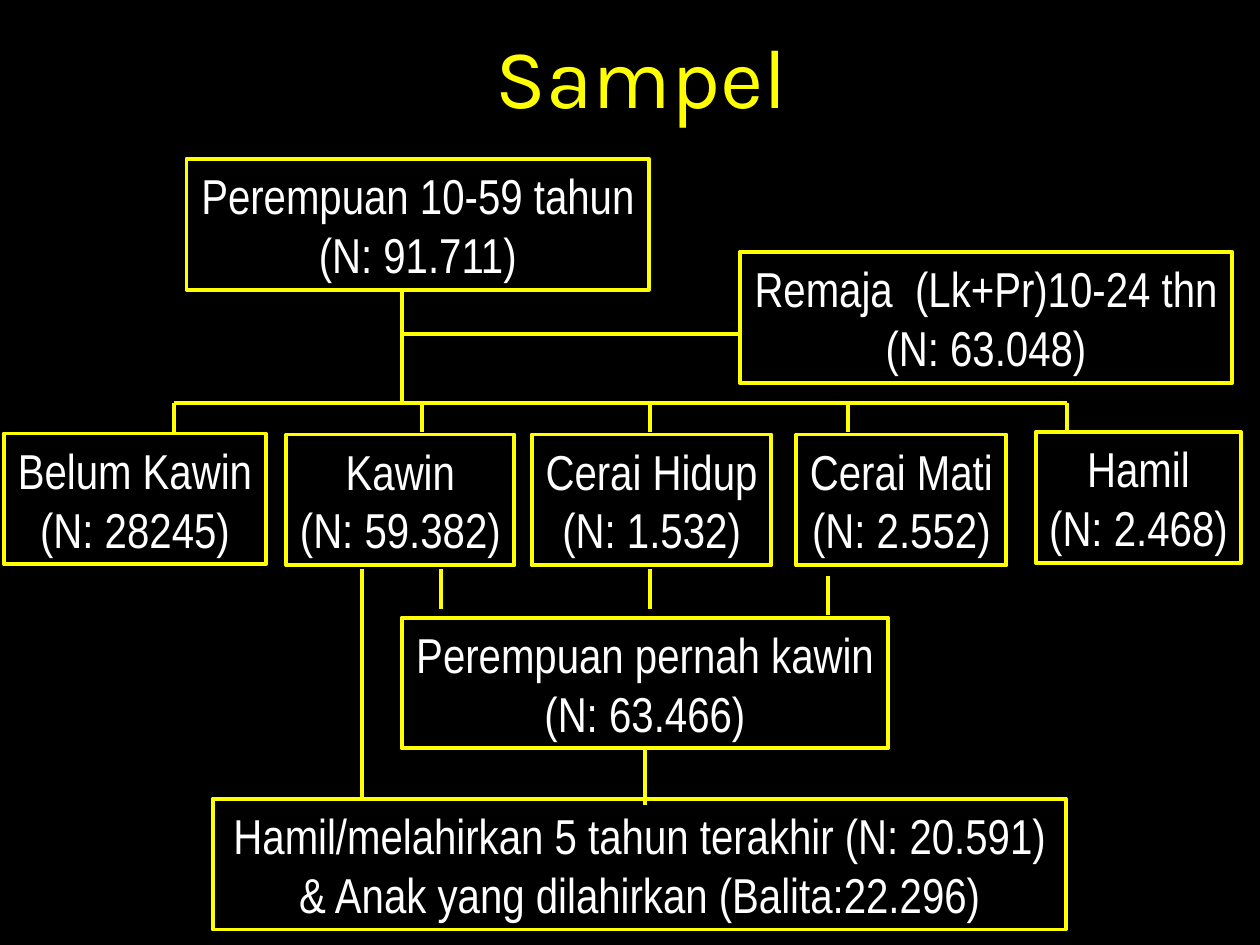
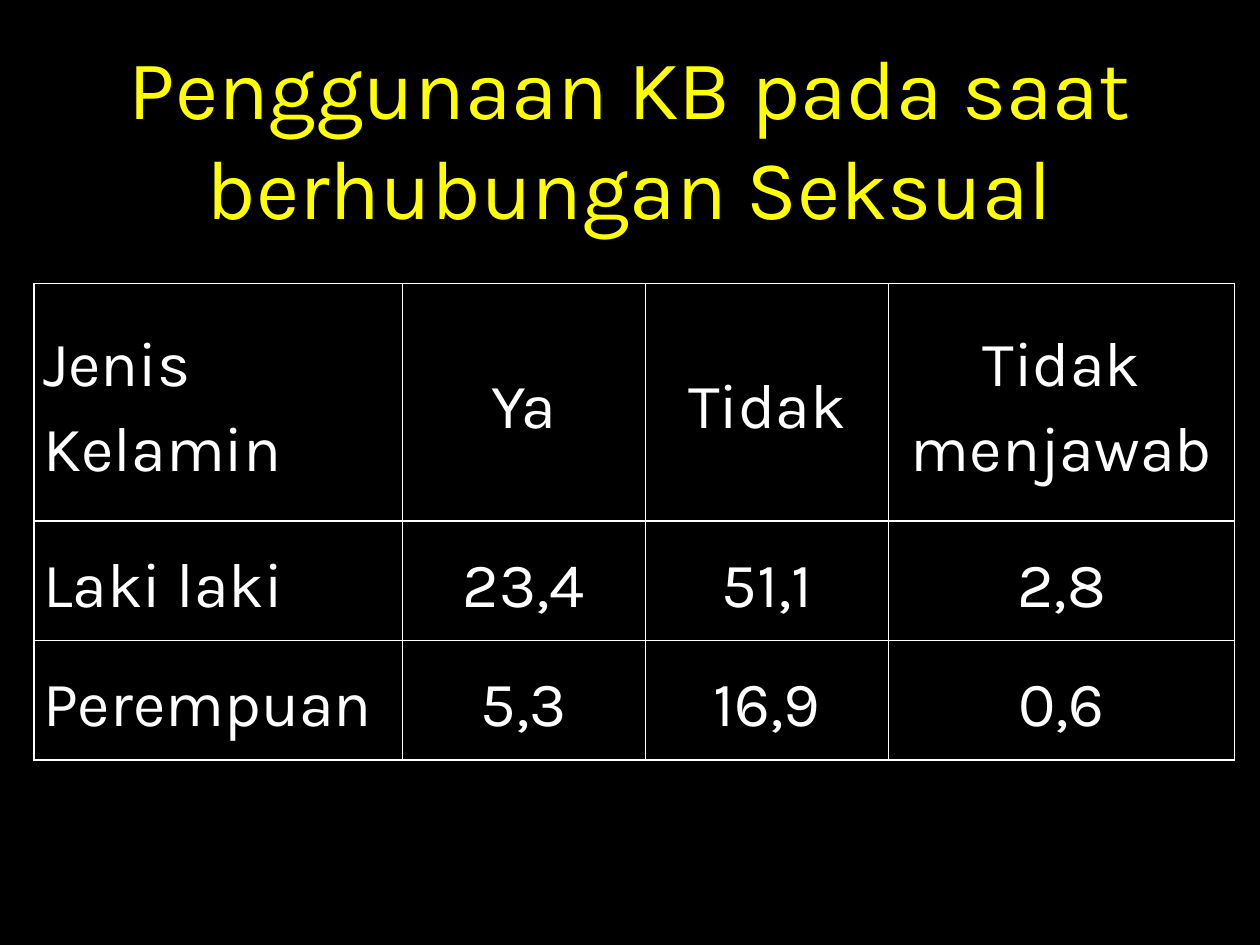
"""Build two slides: the sample tree and the table of KB use."""
from lxml import etree
from pptx import Presentation, util as u
from pptx.dml.color import RGBColor
from pptx.enum import shapes, text as t
from pptx.oxml import ns

BLACK, GOLD, WHITE = "000000", "FFFF00", "FFFFFF"
MID = t.PP_ALIGN.CENTER


def paint(fill, tone):
    fill.solid()
    fill.fore_color.rgb = RGBColor.from_string(tone)


def write(frame, words, font="Karla", size=48, tone=WHITE, align=MID, space=None, wrap=True):
    frame.word_wrap = wrap
    frame.vertical_anchor = t.MSO_ANCHOR.MIDDLE
    frame.text = words
    for para in frame.paragraphs:
        para.alignment = align
        para.line_spacing = space
        for run in para.runs:
            run.font.name = font
            run.font.size = u.Pt(size)
            paint(run.font.fill, tone)


deck = Presentation()
deck.slide_width, deck.slide_height = u.Cm(25.4), u.Cm(19.05)
paint(deck.slide_master.background.fill, BLACK)

heads = [
    ("Sampel", 1.5, 0.2, 2.64),
    ("Penggunaan KB pada saat berhubungan Seksual", 1.27, 0.76, 3.96),
]
pages = []
for words, left, top, high in heads:
    page = deck.slides.add_slide(deck.slide_layouts[5])
    head = page.shapes.title
    head.left, head.top, head.width, head.height = map(u.Cm, (left, top, 22.86, high))
    write(head.text_frame, words, tone=GOLD)
    head.text_frame.auto_size = t.MSO_AUTO_SIZE.NONE
    pages.append(page)
tree, use = pages

TALL = 2.64
boxes = [
    ("Perempuan 10-59 tahun\n(N: 91.711)", 3.76, 3.2, 9.32, False),
    ("Remaja  (Lk+Pr)10-24 thn\n(N: 63.048)", 14.91, 5.08, 9.93, False),
    ("Belum Kawin\n(N: 28245)", 0.08, 8.74, 5.28, False),
    ("Kawin\n(N: 59.382)", 5.77, 8.76, 4.6, False),
    ("Cerai Hidup\n(N: 1.532)", 10.72, 8.76, 4.83, False),
    ("Cerai Mati\n(N: 2.552)", 16.05, 8.76, 4.24, False),
    ("Hamil\n(N: 2.468)", 20.88, 8.71, 4.14, False),
    ("Perempuan pernah kawin\n(N: 63.466)", 8.1, 12.45, 9.8, True),
    ("Hamil/melahirkan 5 tahun terakhir (N: 20.591)\n& Anak yang dilahirkan (Balita:22.296)",
     4.29, 16.1, 17.2, True),
]
for words, left, top, wide, wrap in boxes:
    box = tree.shapes.add_shape(shapes.MSO_SHAPE.RECTANGLE, *map(u.Cm, (left, top, wide, TALL)))
    box.shadow.inherit = False
    box.fill.background()
    paint(box.line.fill, GOLD)
    box.line.width = u.Pt(2.25)
    write(box.text_frame, words, font="Arial Narrow", size=28, wrap=wrap)
    box.text_frame.auto_size = t.MSO_AUTO_SIZE.SHAPE_TO_FIT_TEXT

STEM, BUS = 8.1, 8.13
drops = [3.51, 8.51, 13.11, 17.09, 21.51]
lines = [(x, BUS, x, 8.71) for x in drops]
lines += [
    (drops[0], BUS, drops[-1], BUS),
    (STEM, 5.87, STEM, BUS),
    (STEM, 6.73, 14.91, 6.73),
    (8.89, 11.48, 8.89, 12.27),
    (13.11, 11.48, 13.11, 12.27),
    (16.69, 11.61, 16.69, 12.4),
    (7.29, 11.48, 7.29, 16.08),
    (13, 15.11, 13, 16.23),
]
for ends in lines:
    line = tree.shapes.add_connector(shapes.MSO_CONNECTOR.STRAIGHT, *map(u.Cm, ends))
    paint(line.line.fill, GOLD)
    line.line.width = u.Pt(2.25)
    etree.SubElement(line._element.spPr, ns.qn("a:effectLst"))

rows = [
    ("Jenis Kelamin", "Ya", "Tidak", "Tidak menjawab"),
    ("Laki laki", "23,4", "51,1", "2,8"),
    ("Perempuan", "5,3", "16,9", "0,6"),
]
wides, highs = (7.42, 4.9, 4.9, 6.98), (4.78, 2.41, 2.41)
grid = use.shapes.add_table(
    len(highs), len(wides), *map(u.Cm, (0.69, 5.72, sum(wides), sum(highs)))).table
grid.first_row = grid.horz_banding = False
for col, wide in zip(grid.columns, wides):
    col.width = u.Cm(wide)
for row, high, words in zip(grid.rows, highs, rows):
    row.height = u.Cm(high)
    for i, (cell, word) in enumerate(zip(row.cells, words)):
        write(cell.text_frame, word, size=36, space=1.15, align=MID if i else t.PP_ALIGN.LEFT)
        cell.vertical_anchor = t.MSO_ANCHOR.MIDDLE
        cell.margin_left = cell.margin_right = u.Cm(0.18)
        cell.margin_top = cell.margin_bottom = 0
        props = cell._tc.get_or_add_tcPr()
        for side in "LRTB":
            edge = etree.SubElement(props, ns.qn("a:ln" + side), w=str(u.Pt(1)))
            fill = etree.SubElement(edge, ns.qn("a:solidFill"))
            etree.SubElement(fill, ns.qn("a:srgbClr"), val=WHITE)
        paint(cell.fill, BLACK)

deck.save("out.pptx")
